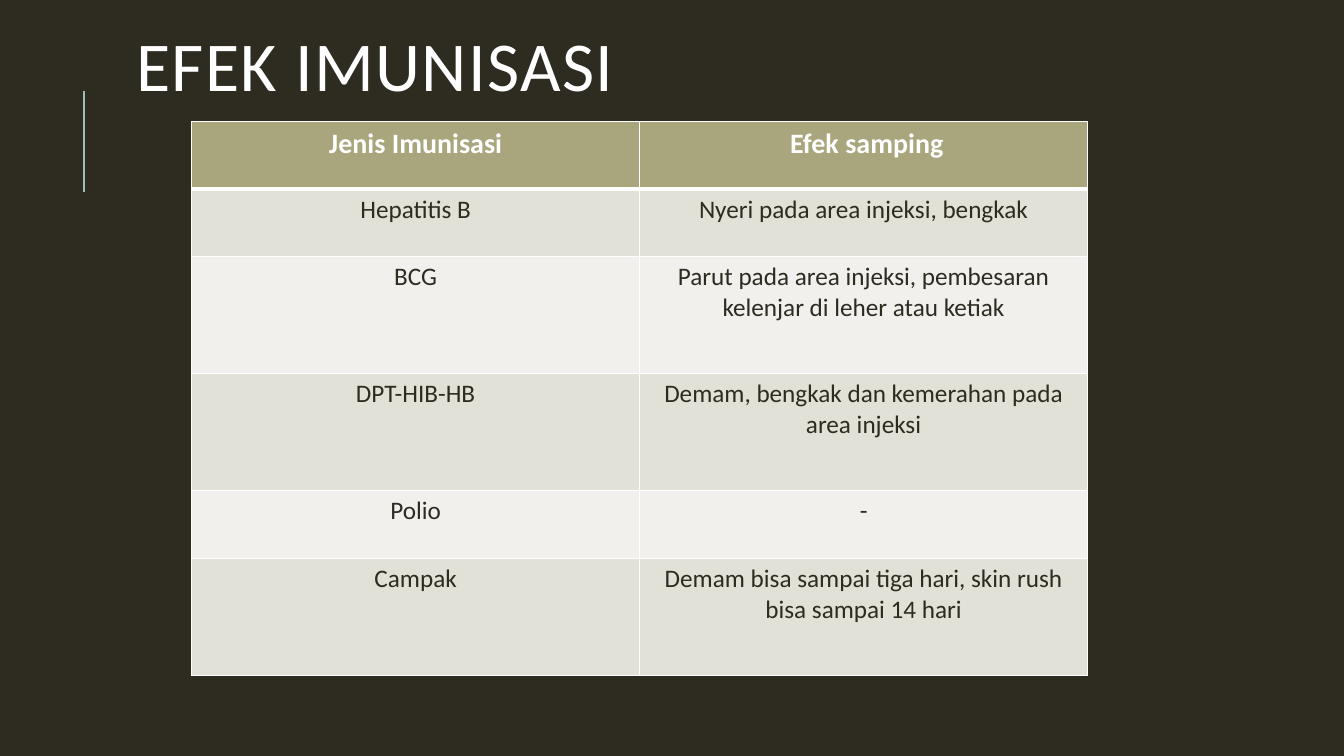
"""Build the slide listing the side effects of each immunisation."""
from lxml import etree
from pptx import Presentation
from pptx import util as u
from pptx.dml.color import RGBColor
from pptx.enum import shapes, text
from pptx.oxml.ns import qn

DARK = RGBColor(0x2E, 0x2B, 0x21)
WHITE = RGBColor(0xFF, 0xFF, 0xFF)
TEAL = RGBColor(0x9C, 0xBE, 0xBD)
OLIVE = RGBColor(0xA9, 0xA5, 0x7C)
BANDS = (RGBColor(0xE2, 0xE1, 0xD7), RGBColor(0xF1, 0xF0, 0xEC))

EFFECTS = (
    ("Jenis Imunisasi", " Efek samping"),
    ("Hepatitis B", "Nyeri pada area injeksi, bengkak"),
    ("BCG", "Parut pada area injeksi, pembesaran kelenjar di leher atau ketiak"),
    ("DPT-HIB-HB", "Demam, bengkak dan kemerahan pada area injeksi"),
    ("Polio", "-"),
    ("Campak", "Demam bisa sampai tiga hari, skin rush bisa sampai 14 hari"),
)
ROW_HEIGHTS = (1.7, 1.7, 2.95, 2.95, 1.7, 2.95)
COLUMN_WIDTH = 11.29


def write(frame, words, size, color, bold=False, align=text.PP_ALIGN.LEFT, spacing=None):
    paragraph = frame.paragraphs[0]
    paragraph.alignment = align
    paragraph.line_spacing = spacing
    run = paragraph.add_run()
    run.text = words
    run.font.name = "Calibri"
    run.font.size = u.Pt(size)
    run.font.bold = bold
    run.font.color.rgb = color
    return run


def add_border(cell, side, points):
    line = etree.SubElement(cell._tc.get_or_add_tcPr(), qn(f"a:ln{side}"), w=str(u.Pt(points)))
    fill = etree.SubElement(line, qn("a:solidFill"))
    etree.SubElement(fill, qn("a:srgbClr"), val=str(WHITE))


deck = Presentation()
deck.slide_width, deck.slide_height = u.Cm(33.87), u.Cm(19.05)
slide = deck.slides.add_slide(deck.slide_layouts[6])
slide.background.fill.solid()
slide.background.fill.fore_color.rgb = DARK

accent = slide.shapes.add_connector(
    shapes.MSO_CONNECTOR.STRAIGHT, u.Cm(2.12), u.Cm(4.83), u.Cm(2.12), u.Cm(2.29))
accent.line.color.rgb = TEAL
accent.line.width = u.Pt(1.5)
etree.SubElement(accent._element.spPr, qn("a:effectLst"))

title = slide.shapes.add_textbox(u.Cm(3.18), u.Cm(0.53), u.Cm(27.51), u.Cm(2.54))
title.text_frame.word_wrap = True
title.text_frame.vertical_anchor = text.MSO_ANCHOR.MIDDLE
heading = write(title.text_frame, "EFEK IMUNISASI", 50, WHITE, spacing=0.8)
heading.font._element.set("spc", "100")

effects = slide.shapes.add_table(
    len(EFFECTS), 2, u.Cm(4.83), u.Cm(3.07),
    u.Cm(2 * COLUMN_WIDTH), u.Cm(sum(ROW_HEIGHTS))).table
for column in effects.columns:
    column.width = u.Cm(COLUMN_WIDTH)

for row, (entries, height) in enumerate(zip(EFFECTS, ROW_HEIGHTS)):
    effects.rows[row].height = u.Cm(height)
    header = row == 0
    for col, words in enumerate(entries):
        cell = effects.cell(row, col)
        for side in "LRTB":
            add_border(cell, side, 3 if header and side == "B" else 1)
        cell.fill.solid()
        cell.fill.fore_color.rgb = OLIVE if header else BANDS[(row - 1) % 2]
        write(cell.text_frame, words, 20 if header else 18, WHITE if header else DARK,
              bold=header, align=text.PP_ALIGN.CENTER)

deck.save("out.pptx")
